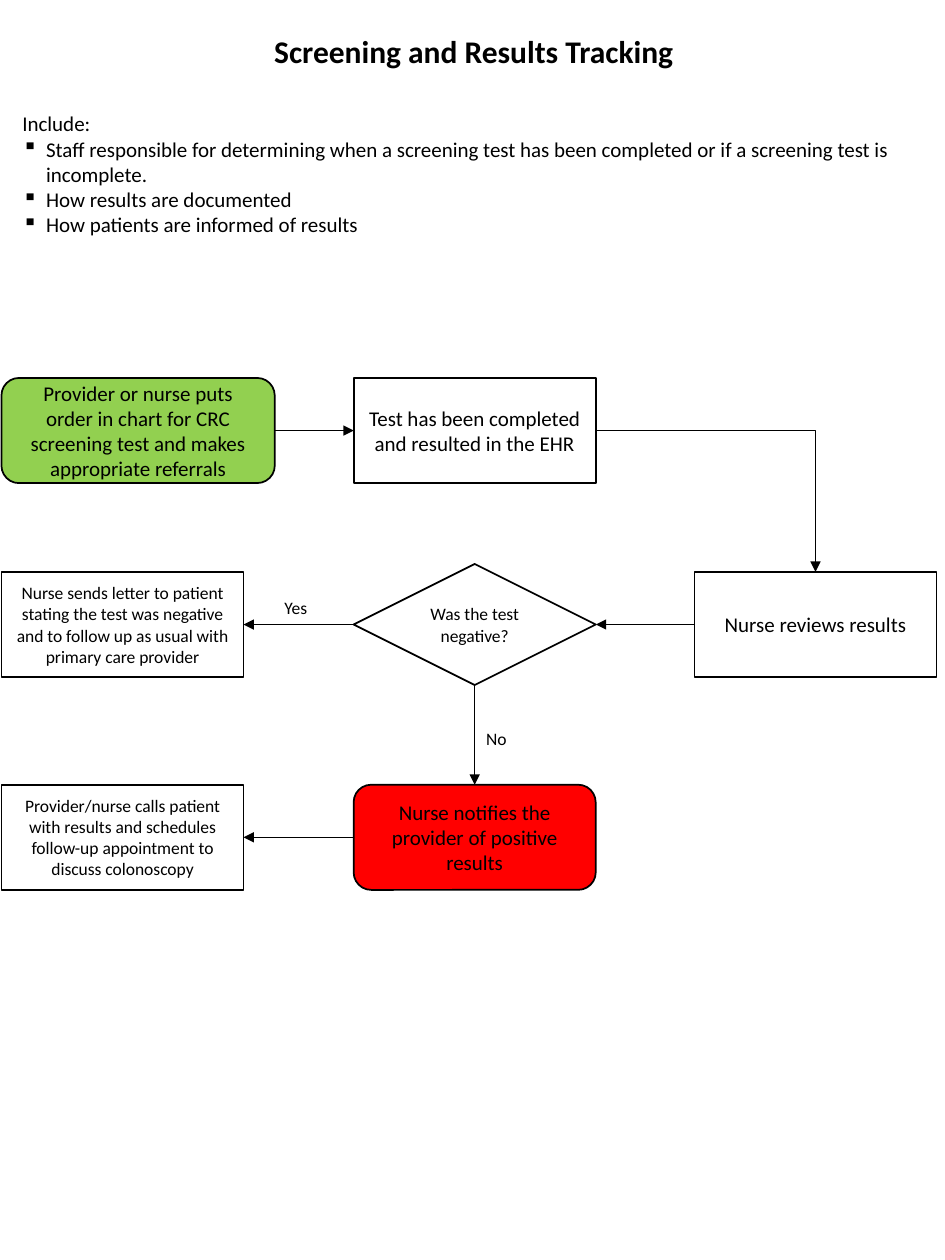
"""Build the screening and results tracking flowchart slide."""
import pptx
import pptx.dml.color
import pptx.enum.shapes
import pptx.enum.text
import pptx.oxml
import pptx.oxml.ns
import pptx.util

Cm, Pt = pptx.util.Cm, pptx.util.Pt
MSO = pptx.enum.shapes.MSO_SHAPE
CONN = pptx.enum.shapes.MSO_CONNECTOR
ALIGN = pptx.enum.text.PP_ALIGN
ANCHOR = pptx.enum.text.MSO_ANCHOR
FIT = pptx.enum.text.MSO_AUTO_SIZE.SHAPE_TO_FIT_TEXT
NS = pptx.oxml.ns.nsdecls("a")


def rgb(color):
    """Turn a hex string into a colour."""
    return pptx.dml.color.RGBColor.from_string(color)


def write(p, text, size, align, bold=False):
    """Add one formatted run to a paragraph."""
    p.alignment = align
    r = p.add_run()
    r.text = text
    r.font.name, r.font.size, r.font.bold = "Calibri", Pt(size), bold
    r.font.color.rgb = rgb("000000")


prs = pptx.Presentation()
prs.slide_width, prs.slide_height = Cm(19.05), Cm(25.4)
s = prs.slides.add_slide(prs.slide_layouts[5])
s.background.fill.solid()
s.background.fill.fore_color.rgb = rgb("FFFFFF")

title = s.shapes.title
title.left, title.top, title.width, title.height = Cm(0.03), Cm(0.51), Cm(19.05), Cm(1.02)
title.text_frame.auto_size = FIT
title.text_frame.vertical_anchor = ANCHOR.TOP
write(title.text_frame.paragraphs[0], "Screening and Results Tracking", 18, ALIGN.CENTER, True)

tf = s.shapes.add_textbox(Cm(0.2), Cm(2.11), Cm(18.67), Cm(2.82)).text_frame
tf.word_wrap, tf.auto_size = True, FIT
write(tf.paragraphs[0], "Include:", 12, ALIGN.LEFT)
for text in (
    "Staff responsible for determining when a screening test has been completed or if a screening test is incomplete.",
    "How results are documented",
    "How patients are informed of results",
):
    p = tf.add_paragraph()
    write(p, text, 12, ALIGN.LEFT)
    pPr = p._p.get_or_add_pPr()
    pPr.set("marL", str(Cm(0.48)))
    pPr.set("indent", str(-Cm(0.48)))
    pPr.append(pptx.oxml.parse_xml(f'<a:buChar {NS} char="▪"/>'))

cols = (0.03, 7.13, 14)
rows = (8.68, 12.59, 16.88)
steps = {}
for name, kind, col, row, width, height, fill, size, text in (
    ("order", MSO.ROUNDED_RECTANGLE, 0, 0, 5.51, 2.12, "92D050", 12,
     "Provider or nurse puts order in chart for CRC screening test and makes appropriate referrals"),
    ("completed", MSO.FLOWCHART_PROCESS, 1, 0, 4.88, 2.12, None, 12,
     "Test has been completed and resulted in the EHR"),
    ("review", MSO.FLOWCHART_PROCESS, 2, 1, 4.88, 2.12, None, 12,
     "Nurse reviews results"),
    ("letter", MSO.FLOWCHART_PROCESS, 0, 1, 4.88, 2.12, None, 10,
     "Nurse sends letter to patient stating the test was negative and to follow up as usual with primary care provider"),
    ("call", MSO.FLOWCHART_PROCESS, 0, 2, 4.88, 2.12, None, 10,
     "Provider/nurse calls patient with results and schedules follow-up appointment to discuss colonoscopy"),
    ("notify", MSO.ROUNDED_RECTANGLE, 1, 2, 4.88, 2.12, "FF0000", 12,
     "Nurse notifies the provider of positive results"),
    ("decision", MSO.FLOWCHART_DECISION, 1, 1, 4.88, 2.44, None, 10,
     "Was the test negative?"),
):
    sp = s.shapes.add_shape(kind, Cm(cols[col]), Cm(rows[row] - height / 2), Cm(width), Cm(height))
    sp.shadow.inherit = False
    if fill:
        sp.fill.solid()
        sp.fill.fore_color.rgb = rgb(fill)
    else:
        sp.fill.background()
    sp.line.color.rgb = rgb("000000")
    sp.line.width = Pt(1)
    tf = sp.text_frame
    tf.word_wrap, tf.vertical_anchor = True, ANCHOR.MIDDLE
    write(tf.paragraphs[0], text, size, ALIGN.CENTER)
    steps[name] = sp

for start, start_side, end, end_side in (
    ("order", 3, "completed", 1),
    ("completed", 3, "review", 0),
    ("decision", 1, "letter", 3),
    ("review", 1, "decision", 3),
    ("decision", 2, "notify", 0),
    ("notify", 1, "call", 3),
):
    bent = (start, end) == ("completed", "review")
    line = s.shapes.add_connector(CONN.ELBOW if bent else CONN.STRAIGHT, 0, 0, 0, 0)
    line.begin_connect(steps[start], start_side)
    line.end_connect(steps[end], end_side)
    line.line.color.rgb = rgb("000000")
    line.line.width = Pt(0.5)
    spPr = line._element.spPr
    if bent:
        spPr.find(pptx.oxml.ns.qn("a:prstGeom")).set("prst", "bentConnector2")
    line.line._get_or_add_ln().append(pptx.oxml.parse_xml(f'<a:tailEnd {NS} type="triangle"/>'))
    spPr.append(pptx.oxml.parse_xml(f"<a:effectLst {NS}/>"))

for text, left, top in (("Yes", 5.28, 11.91), ("No", 9.32, 14.55)):
    tf = s.shapes.add_textbox(Cm(left), Cm(top), Cm(1.37), Cm(0.69)).text_frame
    tf.word_wrap, tf.auto_size = True, FIT
    write(tf.paragraphs[0], text, 10, ALIGN.CENTER)

prs.save("out.pptx")
